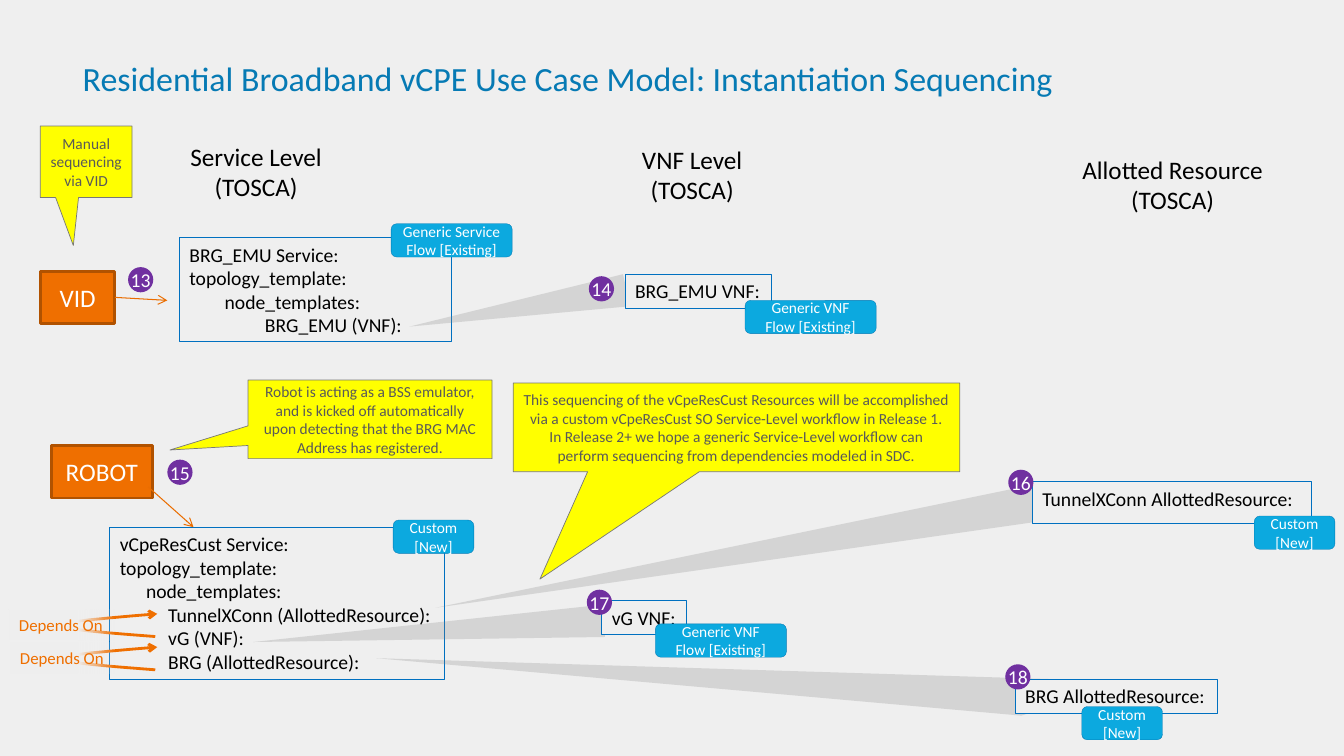
from lxml.etree import SubElement
from pptx import Presentation
from pptx.dml.color import RGBColor
from pptx.enum.shapes import MSO_CONNECTOR, MSO_SHAPE
from pptx.enum.text import MSO_ANCHOR, MSO_AUTO_SIZE, PP_ALIGN
from pptx.oxml.ns import qn
from pptx.util import Pt

PX = 9144  # 100 px to the inch

BACKGROUND = RGBColor(0xEF, 0xEF, 0xEF)
BLACK = RGBColor(0, 0, 0)
WHITE = RGBColor(0xFF, 0xFF, 0xFF)
TITLE_BLUE = RGBColor(0x06, 0x7A, 0xB4)
BOX_BLUE = RGBColor(0x00, 0x70, 0xC0)
TAG_BLUE = RGBColor(0x0C, 0xA9, 0xDF)
PURPLE = RGBColor(0x70, 0x30, 0xA0)
ORANGE = RGBColor(0xEF, 0x6F, 0x00)
DARK_ORANGE = RGBColor(0xB1, 0x52, 0x00)
ARROW_ORANGE = RGBColor(0xEA, 0x6D, 0x00)
YELLOW = RGBColor(0xFF, 0xFF, 0x00)
NOTE_LINE = RGBColor(0x78, 0x78, 0x78)
NOTE_TEXT = RGBColor(0x59, 0x59, 0x59)
GREY = RGBColor(0x80, 0x80, 0x80)

CENTERED = {"word_wrap": True, "vertical_anchor": MSO_ANCHOR.MIDDLE}
UNWRAPPED = {"word_wrap": False, "vertical_anchor": MSO_ANCHOR.TOP}
TIGHT = {"margin_left": 0, "margin_top": 0, "margin_right": 0, "margin_bottom": 0}


def emu(*lengths):
    return [length * PX for length in lengths]


def write(s, lines, size, color, frame, align=PP_ALIGN.CENTER, indents=()):
    tf = s.text_frame
    for name, value in frame.items():
        setattr(tf, name, value)
    for i, line in enumerate(lines):
        p = tf.paragraphs[0] if i == 0 else tf.add_paragraph()
        p.text = line
        p.alignment = align
        if i < len(indents) and indents[i]:
            p._p.get_or_add_pPr().set("marL", str(indents[i] * PX))
        for r in p.runs:
            for name, value in {"size": Pt(size), "name": "Calibri"}.items():
                setattr(r.font, name, value)
            r.font.color.rgb = color


def paint(s, fill=None, line=None, width=0.75):
    s.shadow.inherit = False
    if fill is None:
        s.fill.background()
    else:
        s.fill.solid()
        s.fill.fore_color.rgb = fill
    if line is None:
        s.line.fill.background()
    else:
        s.line.color.rgb = line
        s.line.width = Pt(width)


def add_box(shapes, kind, at, fill, line=None, width=0.75):
    s = shapes.add_shape(kind, *emu(*at))
    paint(s, fill, line, width)
    return s


def add_arrowhead(s):
    SubElement(s.line._get_or_add_ln(), qn("a:tailEnd"), type="arrow")


def add_heading(shapes, at, level):
    s = shapes.add_textbox(*emu(*at))
    write(s, [level, "(TOSCA)"], 18, BLACK, UNWRAPPED)


def add_template(shapes, at, lines, indents=()):
    s = add_box(shapes, MSO_SHAPE.RECTANGLE, at, BACKGROUND, BOX_BLUE)
    write(s, lines, 14, BLACK, UNWRAPPED, PP_ALIGN.LEFT, indents)


def add_path(shapes, points, close):
    # Tenths of a px keep sampled curves smooth
    fine = [(x * 10, y * 10) for x, y in points]
    builder = shapes.build_freeform(*fine[0], scale=PX / 10)
    builder.add_line_segments(fine[1:], close=close)
    return builder.convert_to_shape()


def add_wedge(shapes, points):
    s = add_path(shapes, points, True)
    paint(s, GREY)
    color = s.fill._xPr.find(qn("a:solidFill"))[0]
    SubElement(color, qn("a:alpha"), val="24000")


def bezier(a, b, c, d, steps=12):
    for i in range(steps + 1):
        t = i / steps
        weights = ((1 - t) ** 3, 3 * t * (1 - t) ** 2, 3 * t * t * (1 - t), t ** 3)
        yield tuple(sum(w * q[k] for w, q in zip(weights, (a, b, c, d))) for k in (0, 1))


def add_dependency(shapes, top):
    middle = (59, top + 11.5)
    lower = list(bezier((154, top + 22.5), (107, top + 19), (59, top + 15), middle))
    upper = list(bezier(middle, (59, top + 8), (107, top + 4), (156, top)))
    s = add_path(shapes, lower + upper[1:], False)
    paint(s, None, ORANGE, 2)
    add_arrowhead(s)


def add_dependency_label(shapes, left, top):
    s = add_box(shapes, MSO_SHAPE.RECTANGLE, (left, top, 104, 30), BACKGROUND)
    # Fade the label out to the right, over the arrow
    s.fill.gradient()
    s.fill.gradient_angle = 0
    stops = s.fill._xPr.find(qn("a:gradFill")).find(qn("a:gsLst"))
    for stop in list(stops):
        stops.remove(stop)
    for position, alpha in ((0, 100), (65, 100), (100, 0)):
        stop = SubElement(stops, qn("a:gs"), pos=str(position * 1000))
        color = SubElement(stop, qn("a:srgbClr"), val=str(BACKGROUND))
        SubElement(color, qn("a:alpha"), val=str(alpha * 1000))
    write(s, ["Depends On"], 12, ORANGE, UNWRAPPED, PP_ALIGN.LEFT)


def add_step(shapes, number, left, top):
    s = add_box(shapes, MSO_SHAPE.OVAL, (left, top, 25, 25), PURPLE)
    write(s, [str(number)], 14, WHITE, {**CENTERED, **TIGHT, "word_wrap": False})


def add_actor(shapes, at, name):
    s = add_box(shapes, MSO_SHAPE.RECTANGLE, at, ORANGE, DARK_ORANGE, 2)
    write(s, [name], 18, WHITE, CENTERED)


def add_arrow(shapes, *ends):
    s = shapes.add_connector(MSO_CONNECTOR.STRAIGHT, *emu(*ends))
    s.line.color.rgb = ARROW_ORANGE
    s.line.width = Pt(0.75)
    add_arrowhead(s)
    SubElement(s._element.spPr, qn("a:effectLst"))


def add_note(shapes, at, tip, text):
    s = add_box(shapes, MSO_SHAPE.RECTANGULAR_CALLOUT, at, YELLOW, NOTE_LINE, 0.5)
    s.adjustments[0], s.adjustments[1] = tip
    write(s, [text], 11, NOTE_TEXT, CENTERED)


def add_tag(shapes, left, top, width, text):
    s = add_box(shapes, MSO_SHAPE.ROUNDED_RECTANGLE, (left, top, width, 33),
                TAG_BLUE, TITLE_BLUE, 0.25)
    write(s, [text], 11, WHITE, CENTERED)


def main():
    prs = Presentation()
    prs.slide_width, prs.slide_height = emu(1333, 750)
    slide = prs.slides.add_slide(prs.slide_layouts[5])
    slide.background.fill.solid()
    slide.background.fill.fore_color.rgb = BACKGROUND
    shapes = slide.shapes

    # Title and column headings
    title = shapes.title
    title.left, title.top, title.width, title.height = emu(82, 57, 1219, 50)
    write(title, ["Residential Broadband vCPE Use Case Model: Instantiation Sequencing"],
          24.2, TITLE_BLUE, {**UNWRAPPED, **TIGHT, "word_wrap": True,
                             "auto_size": MSO_AUTO_SIZE.NONE}, PP_ALIGN.LEFT)
    add_heading(shapes, (178, 135, 152, 71), "Service Level")
    add_heading(shapes, (626, 138, 121, 71), "VNF Level")
    add_heading(shapes, (1062, 148, 202, 71), "Allotted Resource")

    # Service templates
    add_template(shapes, (178, 236, 270, 103),
                 ["BRG_EMU Service:", "topology_template:", "node_templates:",
                  "BRG_EMU (VNF):"], (0, 0, 35, 75))
    add_template(shapes, (109, 523, 332, 151),
                 ["vCpeResCust Service:", "topology_template:", "node_templates:",
                  "TunnelXConn (AllottedResource):", "vG (VNF):",
                  "BRG (AllottedResource):"], (0, 0, 26, 48, 48, 48))

    # Wedges from each node to the resource it expands into
    for points in (
        [(406, 324), (618, 272), (621, 286), (623, 304)],
        [(1115, 676), (373, 653), (1013, 710)],
        [(251, 637), (597, 600), (600, 632)],
        [(432, 603), (1029, 480), (1028, 499), (1026, 518)],
    ):
        add_wedge(shapes, points)

    # Resources
    add_template(shapes, (620, 272, 145, 34), ["BRG_EMU VNF:"])
    add_template(shapes, (1007, 674, 201, 34), ["BRG AllottedResource:"])
    add_template(shapes, (597, 596, 84, 34), ["vG VNF:"])
    add_template(shapes, (1024, 478, 277, 41), ["TunnelXConn AllottedResource:"])

    # Dependencies between nodes
    for top in (642, 609):
        add_dependency(shapes, top)
    add_dependency_label(shapes, 9, 605)
    add_dependency_label(shapes, 10, 638)

    # Step numbers
    steps = [(127, 265), (584, 274), (166, 456), (1000, 466), (582, 585), (997, 659)]
    for number, (left, top) in enumerate(steps, 13):
        add_step(shapes, number, left, top)

    # Actors and their arrows
    add_actor(shapes, (40, 269, 74, 52), "VID")
    add_arrow(shapes, 114, 295, 166, 298)
    add_actor(shapes, (51, 442, 100, 52), "ROBOT")
    add_arrow(shapes, 147, 483, 192, 523)

    # Notes
    add_note(shapes, (40, 125, 91, 71), (-0.14, 1.17), "Manual sequencing via VID")
    add_note(shapes, (246, 377, 242, 78), (-0.82, 0.39),
             "Robot is acting as a BSS emulator, and is kicked off automatically "
             "upon detecting that the BRG MAC Address has registered.")
    add_note(shapes, (509, 380, 443, 88), (-0.44, 1.71),
             "This sequencing of the vCpeResCust Resources will be accomplished via a "
             "custom vCpeResCust SO Service-Level workflow in Release 1. In Release 2+ "
             "we hope a generic Service-Level workflow can perform sequencing from "
             "dependencies modeled in SDC.")

    # Workflow tags
    add_tag(shapes, 388, 222, 120, "Generic Service Flow [Existing]")
    for left, top in ((739, 298), (650, 619)):
        add_tag(shapes, left, top, 130, "Generic VNF\vFlow [Existing]")
    for left, top in ((390, 516), (1244, 512), (1073, 701)):
        add_tag(shapes, left, top, 80, "Custom [New]")

    prs.save("out.pptx")


if __name__ == "__main__":
    main()
